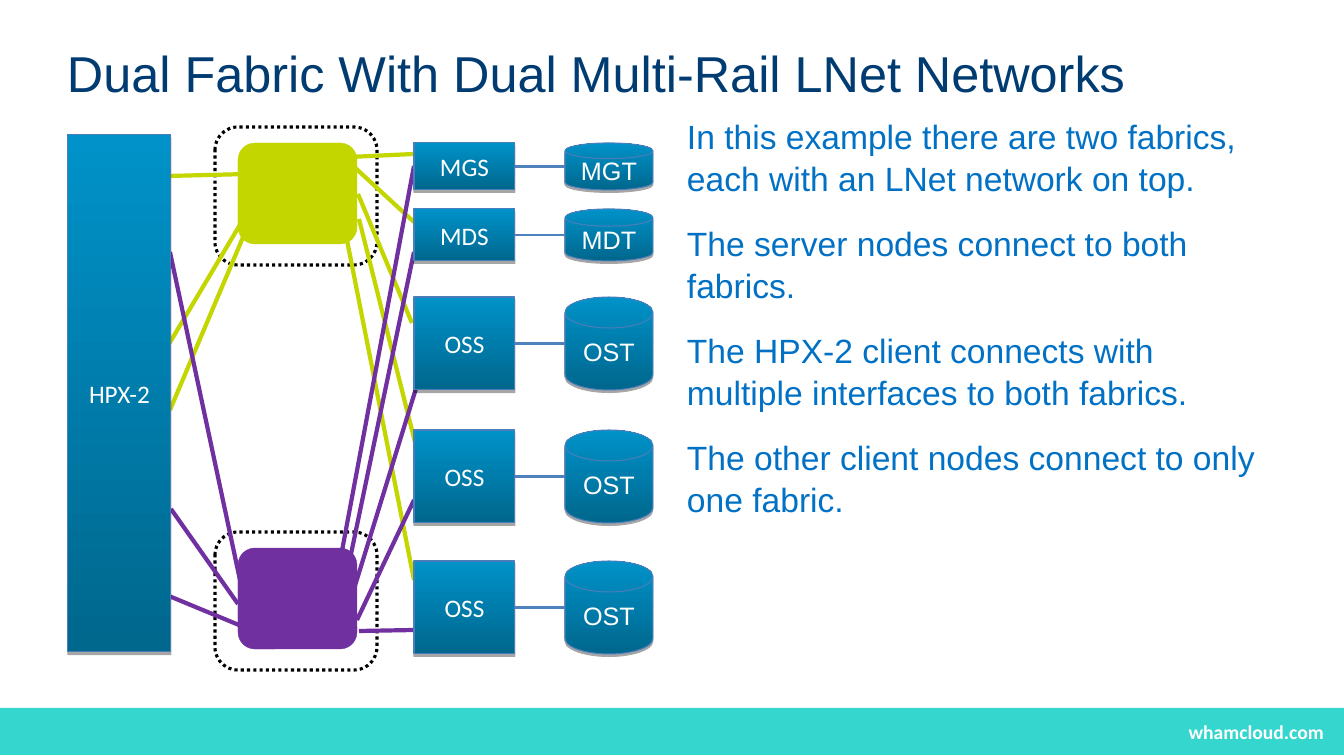
import pptx
import pptx.util
import pptx.dml.color
import pptx.enum.dml
import pptx.enum.shapes
import pptx.enum.text
import pptx.oxml.ns
from lxml import etree

EMU_PER_PX = 12192000 / 1344
COLOURS = {
    "navy": "003C71", "blue": "0071C5", "teal": "34D6CE", "white": "FFFFFF",
    "black": "000000", "lime": "C3D600", "purple": "7030A0",
    "node_dark": "00678D", "node_light": "0092C9",
    "node_edge": "4A7EBB", "storage_link": "4F81BD",
}
SHAPES = pptx.enum.shapes.MSO_SHAPE
ALIGN = pptx.enum.text.PP_ALIGN
ANCHOR = pptx.enum.text.MSO_ANCHOR

STATEMENTS = [
    "In this example there are two fabrics, each with an LNet network on top.",
    "The server nodes connect to both fabrics.",
    "The HPX-2 client connects with multiple interfaces to both fabrics.",
    "The other client nodes connect to only one fabric.",
]

# server, its storage target, top, height
SERVERS = [
    ("MGS", "MGT", 16, 47),
    ("MDS", "MDT", 82, 52),
    ("OSS", "OST", 170, 93),
    ("OSS", "OST", 303, 93),
    ("OSS", "OST", 434, 93),
]

# colour, top, links as (x1, y1, x2, y2) within the diagram
FABRICS = [
    ("lime", 0, [
        (101, 49, 180, 47), (101, 217, 176, 91), (102, 283, 176, 108),
        (346, 27, 281, 30), (346, 95, 283, 37), (344, 196, 290, 67),
        (350, 327, 291, 92), (346, 453, 279, 113)]),
    ("purple", 405, [
        (102, 125, 172, 453), (103, 382, 170, 477), (101, 469, 171, 498),
        (346, 39, 274, 424), (346, 125, 282, 432), (355, 239, 286, 462),
        (346, 373, 289, 493), (346, 503, 291, 504)]),
]


def px(length):
    return pptx.util.Emu(round(length * EMU_PER_PX))


def rgb(name):
    return pptx.dml.color.RGBColor.from_string(COLOURS[name])


def apply(target, values):
    for name, value in values.items():
        setattr(target, name, value)


def place(shape, box):
    apply(shape, dict(zip(("left", "top", "width", "height"), map(px, box))))


def write(paragraph, text, font, size, colour, bold=False):
    run = paragraph.add_run()
    run.text = text
    apply(run.font, {"name": font, "size": pptx.util.Pt(size), "bold": bold})
    run.font.color.rgb = rgb(colour)


def add_shape(slide, kind, box, fill=None, edge=None, width=0.75):
    shape = slide.shapes.add_shape(kind, *map(px, box))
    shape.shadow.inherit = False
    if fill:
        shape.fill.solid()
        shape.fill.fore_color.rgb = rgb(fill)
    else:
        shape.fill.background()
    if edge:
        shape.line.color.rgb = rgb(edge)
        shape.line.width = pptx.util.Pt(width)
    else:
        shape.line.fill.background()
    return shape


def add_link(slide, ends, colour, width):
    link = slide.shapes.add_connector(
        pptx.enum.shapes.MSO_CONNECTOR.STRAIGHT, *map(px, ends))
    link.line.color.rgb = rgb(colour)
    link.line.width = pptx.util.Pt(width)
    etree.SubElement(link._element.spPr, pptx.oxml.ns.qn("a:effectLst"))
    return link


def add_node(slide, kind, box, label, font):
    """Add a labelled machine or storage target with gradient and shadow."""
    node = add_shape(slide, kind, box, edge="node_edge")
    node.fill.gradient()
    node.fill.gradient_angle = 90
    for stop, colour in zip(node.fill.gradient_stops, ("node_dark", "node_light")):
        stop.color.rgb = rgb(colour)
    qn = pptx.oxml.ns.qn
    effects = node._element.spPr.find(qn("a:effectLst"))
    shadow = etree.SubElement(effects, qn("a:outerShdw"), blurRad="0",
                              dist="22860", dir="5400000", rotWithShape="0")
    tint = etree.SubElement(shadow, qn("a:srgbClr"), val=COLOURS["black"])
    etree.SubElement(tint, qn("a:alpha"), val="35000")
    node.text_frame.vertical_anchor = ANCHOR.MIDDLE
    paragraph = node.text_frame.paragraphs[0]
    paragraph.alignment = ALIGN.CENTER
    write(paragraph, label, font, 18, "white")
    return node


def add_fabric(slide, left, top, colour, links):
    zone = add_shape(slide, SHAPES.ROUNDED_RECTANGLE, (left + 147, top, 162, 138),
                     edge="black", width=2.25)
    zone.line.dash_style = pptx.enum.dml.MSO_LINE.ROUND_DOT
    for ends in links:
        add_link(slide, ends, colour, 3)
    add_shape(slide, SHAPES.ROUNDED_RECTANGLE, (left + 170, top + 16, 119, 101),
              colour, colour, 0.25)


def add_diagram(slide, box):
    left, top, width, height = box
    for colour, offset, links in FABRICS:
        shifted = [(x1 + left, y1 + top, x2 + left, y2 + top)
                   for x1, y1, x2, y2 in links]
        add_fabric(slide, left, top + offset, colour, shifted)
    add_node(slide, SHAPES.RECTANGLE, (left, top + 8, 103, height - 26),
             "HPX-2", "Calibri")
    server_width, target_width = 101, 88
    server_left, target_left = left + 346, left + width - target_width
    for server_name, target_name, offset, tall in SERVERS:
        row = top + offset
        middle = row + tall / 2
        server = add_node(slide, SHAPES.RECTANGLE,
                          (server_left, row, server_width, tall),
                          server_name, "Calibri")
        add_node(slide, SHAPES.FLOWCHART_MAGNETIC_DISK,
                 (target_left, row, target_width, tall), target_name, "Arial")
        link = add_link(slide, (server_left + server_width, middle,
                                target_left, middle), "storage_link", 2)
        link.begin_connect(server, 3)


def fill_placeholder(placeholder, box, lines, size, colour, anchor, spacing):
    place(placeholder, box)
    frame = placeholder.text_frame
    apply(frame, {"margin_left": 0, "margin_top": 0, "margin_right": 0,
                  "margin_bottom": 0, "word_wrap": True, "vertical_anchor": anchor,
                  "auto_size": pptx.enum.text.MSO_AUTO_SIZE.NONE})
    for index, line in enumerate(lines):
        paragraph = frame.add_paragraph() if index else frame.paragraphs[0]
        properties = paragraph._p.get_or_add_pPr()
        apply_indent = {"marL": "0", "indent": "0"}
        for name, value in apply_indent.items():
            properties.set(name, value)
        etree.SubElement(properties, pptx.oxml.ns.qn("a:buNone"))
        apply(paragraph, {"alignment": ALIGN.LEFT, "line_spacing": spacing,
                          "space_before": pptx.util.Pt(16 if index else 0)})
        write(paragraph, line, "Arial", size, colour)


def add_footer(slide, box):
    left, top, width, height = box
    add_shape(slide, SHAPES.RECTANGLE, box, "teal")
    site = slide.shapes.add_textbox(*map(px, (left + width - 209, top + 7, 199, 33)))
    site.text_frame.word_wrap = True
    paragraph = site.text_frame.paragraphs[0]
    paragraph.alignment = ALIGN.RIGHT
    write(paragraph, "whamcloud.com", "Calibri", 14, "white", True)


def main():
    deck = pptx.Presentation()
    deck.slide_width, deck.slide_height = px(1344), px(756)
    slide = deck.slides.add_slide(deck.slide_layouts[1])
    add_footer(slide, (0, 708, 1344, 47))
    fill_placeholder(slide.shapes.title, (67, 38, 1210, 65),
                     ["Dual Fabric With Dual Multi-Rail LNet Networks"],
                     36, "navy", ANCHOR.BOTTOM, 1.0)
    fill_placeholder(slide.placeholders[1], (687, 114, 589, 567), STATEMENTS,
                     24, "blue", ANCHOR.TOP, 1.05)
    add_diagram(slide, (68, 127, 585, 543))
    deck.save("out.pptx")


if __name__ == "__main__":
    main()
